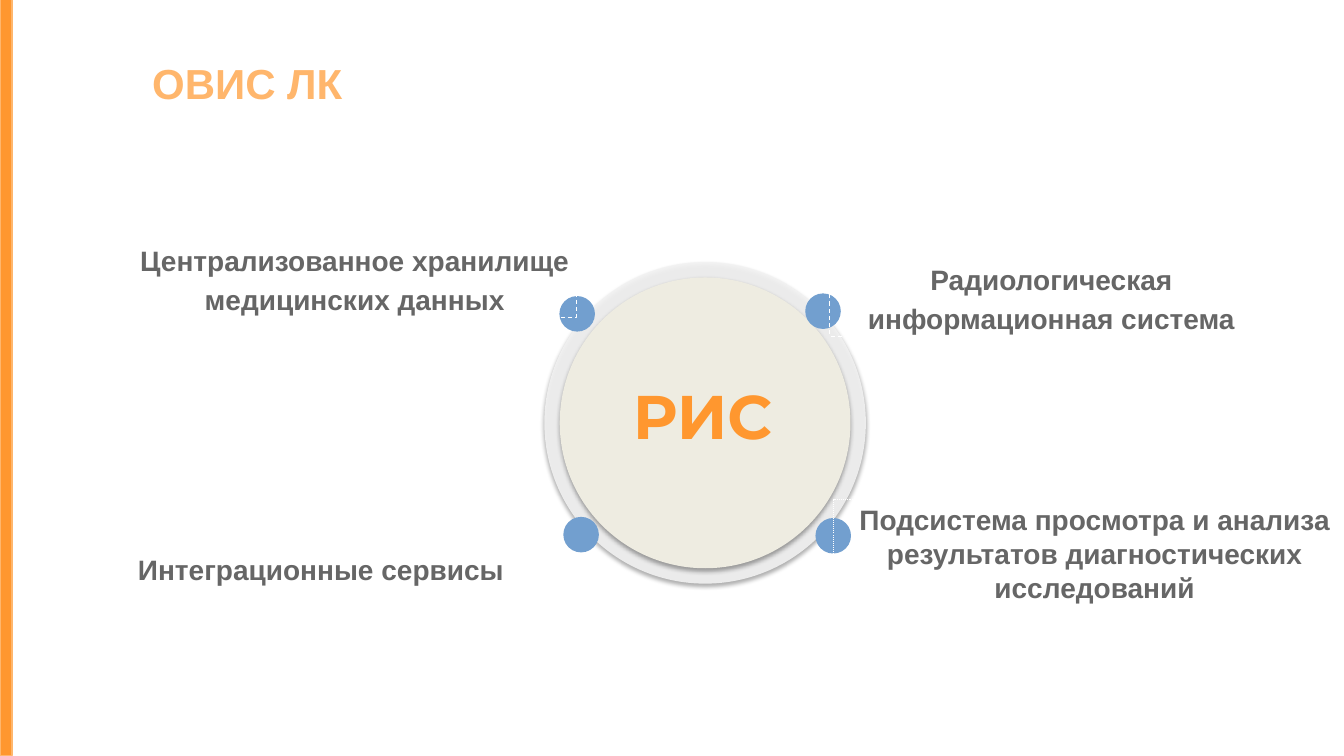
from lxml import etree
from pptx import Presentation
from pptx.dml.color import RGBColor
from pptx.enum.dml import MSO_LINE
from pptx.enum.shapes import MSO_SHAPE
from pptx.enum.text import MSO_ANCHOR, MSO_AUTO_SIZE, PP_ALIGN
from pptx.oxml import parse_xml
from pptx.oxml.ns import nsdecls, qn
from pptx.util import Pt

ORANGE = RGBColor(0xFF, 0x97, 0x2F)
LIGHT_ORANGE = RGBColor(0xFF, 0xB6, 0x6C)
BLUE = RGBColor(0x72, 0x9F, 0xCF)
GREY = RGBColor(0x66, 0x66, 0x66)
PALE_GREY = RGBColor(0xF2, 0xF2, 0xF2)
BEIGE = RGBColor(0xEE, 0xEC, 0xE1)
WHITE = RGBColor(0xFF, 0xFF, 0xFF)

OVAL, RECTANGLE = MSO_SHAPE.OVAL, MSO_SHAPE.RECTANGLE
DASH, DOT = MSO_LINE.DASH, MSO_LINE.ROUND_DOT
LEFT, CENTER = PP_ALIGN.LEFT, PP_ALIGN.CENTER
TOP, MIDDLE = MSO_ANCHOR.TOP, MSO_ANCHOR.MIDDLE
GROW, FIXED = MSO_AUTO_SIZE.SHAPE_TO_FIT_TEXT, MSO_AUTO_SIZE.NONE

SLIDE_WIDTH, SLIDE_HEIGHT = 960, 540
DOT_SIZE = 25.4
RING_WIDTH = 11
FRAME = {"margin_left": Pt(3.6), "margin_right": Pt(3.6),
         "margin_top": Pt(1.8), "margin_bottom": Pt(1.8), "word_wrap": True}
LOOSE = {"line_spacing": 1.15, "space_before": Pt(4.2), "space_after": Pt(5.7)}
TIGHT = {"line_spacing": 1.0, "space_before": Pt(0), "space_after": Pt(0)}

COMPONENTS = [
    ("Централизованное хранилище медицинских данных",
     (95, 169.2, 316.8, 57.6), (399.6, 211.5), DASH, LOOSE),
    ("Подсистема просмотра и анализа результатов диагностических исследований",
     (595.4, 357.1, 373, 76.3), (582.5, 370), DOT, TIGHT),
    ("Интеграционные сервисы",
     (90, 392.4, 278.6, 28.1), (402.4, 369.2), DOT, TIGHT),
    ("Радиологическая информационная система",
     (592.6, 182.9, 316.8, 57.6), (575.2, 209.6), DASH, LOOSE),
]


def apply(target, values):
    for name, value in values.items():
        setattr(target, name, value)


def add_plain(slide, kind, box, fill=None):
    plain = slide.shapes.add_shape(kind, *map(Pt, box))
    plain.shadow.inherit = False
    plain.line.fill.background()
    if fill is None:
        plain.fill.background()
    else:
        plain.fill.solid()
        plain.fill.fore_color.rgb = fill
    return plain


def outline(shape, color, dash=None):
    shape.line.color.rgb = color
    apply(shape.line, {"width": Pt(0.75), "dash_style": dash})


def write(shape, wording, font, align=CENTER, anchor=MIDDLE, fit=GROW, spacing=TIGHT):
    apply(shape.text_frame, FRAME | {"vertical_anchor": anchor, "auto_size": fit})
    paragraph = shape.text_frame.paragraphs[0]
    apply(paragraph, spacing | {"alignment": align})
    run = paragraph.add_run()
    run.text = wording
    color, size, face = font
    apply(run.font, {"size": Pt(size), "name": face, "bold": True})
    run.font.color.rgb = color


def cast_shadow(shape):
    effects = shape._element.spPr.find(qn("a:effectLst"))
    effects.append(parse_xml(
        f'<a:outerShdw {nsdecls("a")} blurRad="{Pt(3.1)}" dist="{Pt(1.8)}" '
        'dir="5400000" algn="t" rotWithShape="0"><a:srgbClr val="000000">'
        '<a:alpha val="35000"/></a:srgbClr></a:outerShdw>'))


def add_title(slide, box):
    title = slide.shapes.title
    apply(title, dict(zip(("left", "top", "width", "height"), map(Pt, box))))
    write(title, "ОВИС ЛК", (LIGHT_ORANGE, 30, "Arial"), LEFT, TOP, FIXED)


def add_side_bar(slide, box):
    outline(add_plain(slide, RECTANGLE, box, ORANGE), LIGHT_ORANGE)


def add_hub(slide, box):
    left, top, size = box
    ring = add_plain(slide, OVAL, (left, top, size, size), PALE_GREY)
    ring_color = ring._element.spPr.find(qn("a:solidFill"))[0]
    etree.SubElement(ring_color, qn("a:alpha")).set("val", "90000")
    inner = size - 2 * RING_WIDTH
    disc = add_plain(slide, OVAL, (left + RING_WIDTH, top + RING_WIDTH, inner, inner), BEIGE)
    for circle in (ring, disc):
        cast_shadow(circle)


def add_hub_name(slide, box):
    hub_name = slide.shapes.add_textbox(*map(Pt, box))
    write(hub_name, "РИС", (ORANGE, 44, "Montserrat"))


def add_component(slide, wording, box, dot_corner, dash, spacing):
    add_plain(slide, OVAL, (*dot_corner, DOT_SIZE, DOT_SIZE), BLUE)
    label = add_plain(slide, RECTANGLE, box)
    outline(label, WHITE, dash)
    write(label, wording, (GREY, 20, "Arial"), spacing=spacing)


def main():
    deck = Presentation()
    apply(deck, {"slide_width": Pt(SLIDE_WIDTH), "slide_height": Pt(SLIDE_HEIGHT)})
    slide = deck.slides.add_slide(deck.slide_layouts.get_by_name("Title Only"))
    add_title(slide, (105.1, 39.2, 515.5, 49))
    add_hub(slide, (388.8, 187.2, 229.7))
    for component in COMPONENTS:
        add_component(slide, *component)
    add_hub_name(slide, (418.3, 267.8, 167, 56.9))
    add_side_bar(slide, (0, 0, 8.6, SLIDE_HEIGHT))
    deck.save("out.pptx")


if __name__ == "__main__":
    main()
